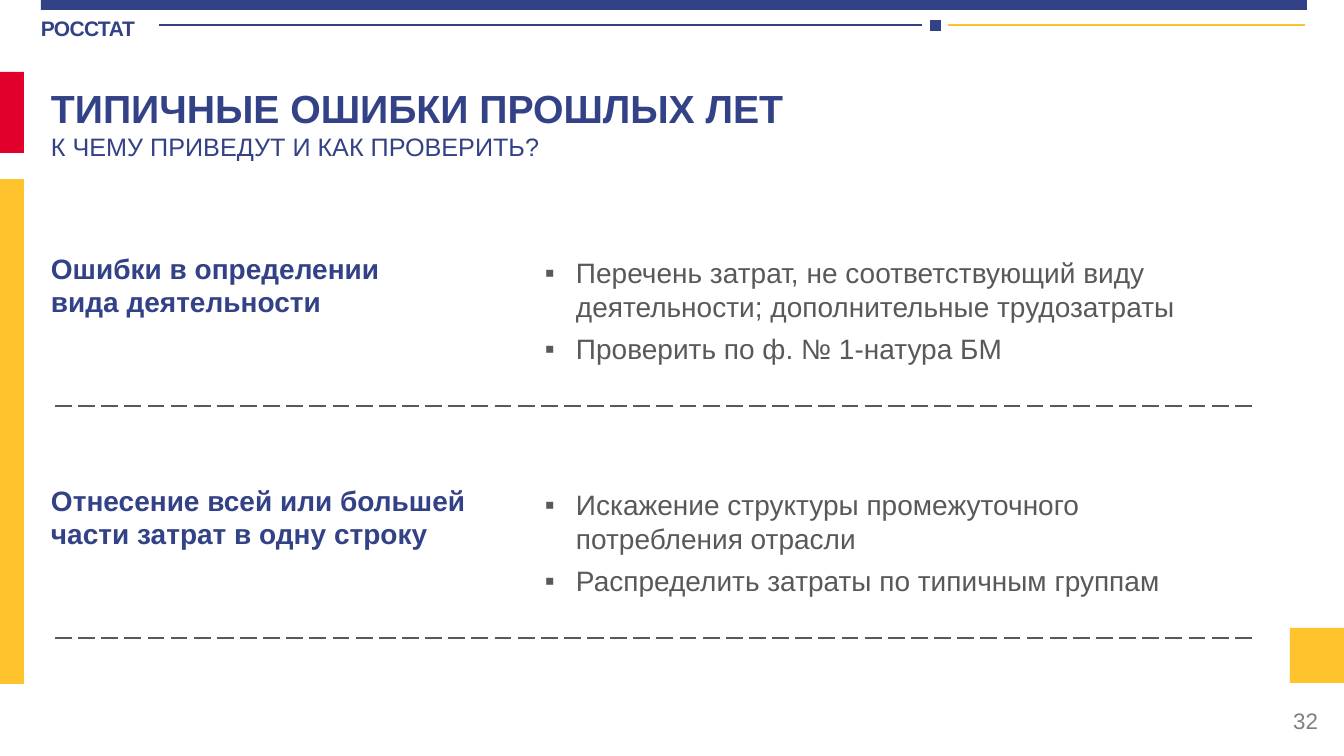
import pptx
import pptx.util
import pptx.dml.color
import pptx.enum.dml
import pptx.enum.shapes
import pptx.enum.text
import lxml.etree
from pptx.oxml.ns import qn

PX = 914400 / 100.8
COLORS = {"blue": "334286", "red": "E1002B", "yellow": "FFC32E",
          "white": "FFFFFF", "body": "595959", "number": "808080"}


def color(name):
    return pptx.dml.color.RGBColor.from_string(COLORS[name])


def write(box, lines, at, size=20, ink="blue", bold=False, bullet=None, gap=0,
          align="LEFT", anchor="TOP", inset=(10, 5), spacing=0):
    """Place a box and fill it; a line is a text or (text, size, bold)."""
    box.left, box.top, box.width, box.height = (round(v * PX) for v in at)
    frame = box.text_frame
    frame.word_wrap = True
    frame.auto_size = pptx.enum.text.MSO_AUTO_SIZE.NONE
    frame.vertical_anchor = getattr(pptx.enum.text.MSO_ANCHOR, anchor)
    frame.margin_left = frame.margin_right = round(inset[0] * PX)
    frame.margin_top = frame.margin_bottom = round(inset[1] * PX)
    for i, line in enumerate(lines):
        text, points, heavy = (line, size, bold) if isinstance(line, str) else line
        paragraph = frame.paragraphs[0] if i == 0 else frame.add_paragraph()
        if bullet:
            props = paragraph._p.get_or_add_pPr()
            props.set("marL", str(round(31 * PX)))
            props.set("indent", str(round(-31 * PX)))
            lxml.etree.SubElement(props, qn("a:buFont"), typeface="Arial")
            lxml.etree.SubElement(props, qn("a:buChar"), char=bullet)
        paragraph.alignment = getattr(pptx.enum.text.PP_ALIGN, align)
        paragraph.space_before = pptx.util.Pt(gap if i else 0)
        run = paragraph.add_run()
        run.text = text
        run.font.name = "Arial"
        run.font.size = pptx.util.Pt(points)
        run.font.bold = heavy
        run.font.color.rgb = color(ink)
        if spacing:
            run._r.get_or_add_rPr().set("spc", str(spacing))


def draw_line(x1, x2, y, ink, points):
    line = slide.shapes.add_connector(
        pptx.enum.shapes.MSO_CONNECTOR.STRAIGHT,
        *(round(v * PX) for v in (x1, y, x2, y)))
    line.line.color.rgb = color(ink)
    line.line.width = pptx.util.Pt(points)
    lxml.etree.SubElement(line._element.spPr, qn("a:effectLst"))
    return line


deck = pptx.Presentation()
deck.slide_width = round(1344 * PX)
deck.slide_height = round(756 * PX)
slide = deck.slides.add_slide(deck.slide_layouts[5])

# Header rules
draw_line(159, 922, 25, "blue", 2)
draw_line(948, 1305, 25, "yellow", 2)

# Colour blocks
for ink, *at in [("blue", 41, 0, 1266, 10),
                 ("red", 0, 72, 24, 81),
                 ("yellow", 0, 179, 24, 505),
                 ("yellow", 1290, 628, 54, 55),
                 ("blue", 930, 20, 11, 11)]:
    block = slide.shapes.add_shape(pptx.enum.shapes.MSO_SHAPE.RECTANGLE,
                                   *(round(v * PX) for v in at))
    block.shadow.inherit = False
    block.fill.solid()
    block.fill.fore_color.rgb = color(ink)
    block.line.fill.background()

# Agency name, title and page number
agency = slide.shapes.add_textbox(0, 0, 0, 0)
write(agency, ["РОССТАТ"], (41, 15, 114, 32), size=15, bold=True,
      inset=(0, 1), spacing=-50)
write(slide.shapes.title,
      [("ТИПИЧНЫЕ ОШИБКИ ПРОШЛЫХ ЛЕТ", 28, True),
       ("К ЧЕМУ ПРИВЕДУТ И КАК ПРОВЕРИТЬ?", 18, False)],
      (41, 79, 1223, 94))
page_number = slide.shapes.add_textbox(0, 0, 0, 0)
write(page_number, ["32"], (1026, 701, 302, 40), size=16, ink="number",
      align="RIGHT", anchor="MIDDLE")

# Mistakes with their consequences and checks
mistakes = [
    ("Ошибки в определении вида деятельности", 357,
     ["Перечень затрат, не соответствующий виду деятельности; дополнительные трудозатраты",
      "Проверить по ф. № 1-натура БМ"]),
    ("Отнесение всей или большей части затрат в одну строку", 440,
     ["Искажение структуры промежуточного потребления отрасли",
      "Распределить затраты по типичным группам"]),
]
for row, (mistake, width, advice) in enumerate(mistakes):
    top = 246 + 232 * row
    heading = slide.shapes.add_textbox(0, 0, 0, 0)
    write(heading, [mistake], (41, top, width, 78), bold=True)
    details = slide.shapes.add_textbox(0, 0, 0, 0)
    write(details, advice, (535, top + 5, 672, 120), ink="body", bullet="▪", gap=6)
    divider = draw_line(55, 1256, top + 160, "body", 1.5)
    divider.line.dash_style = pptx.enum.dml.MSO_LINE.LONG_DASH

deck.save("out.pptx")
